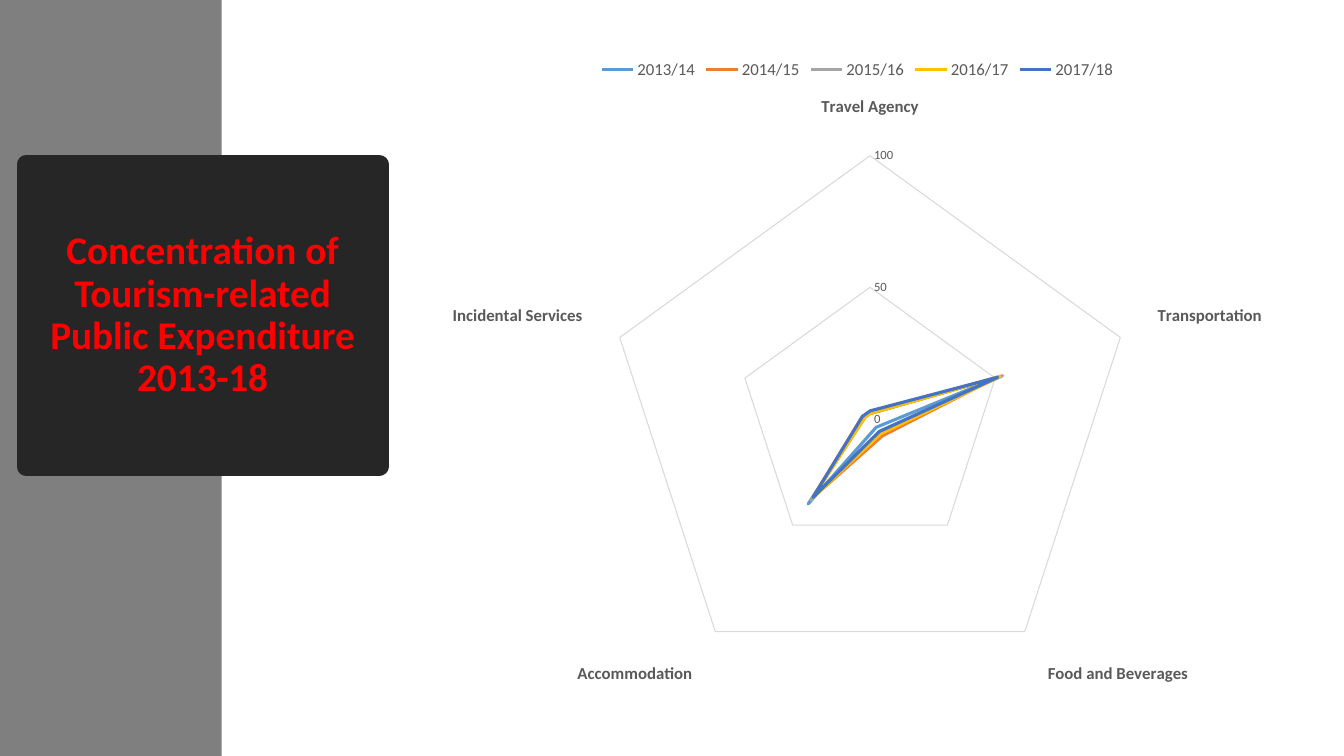
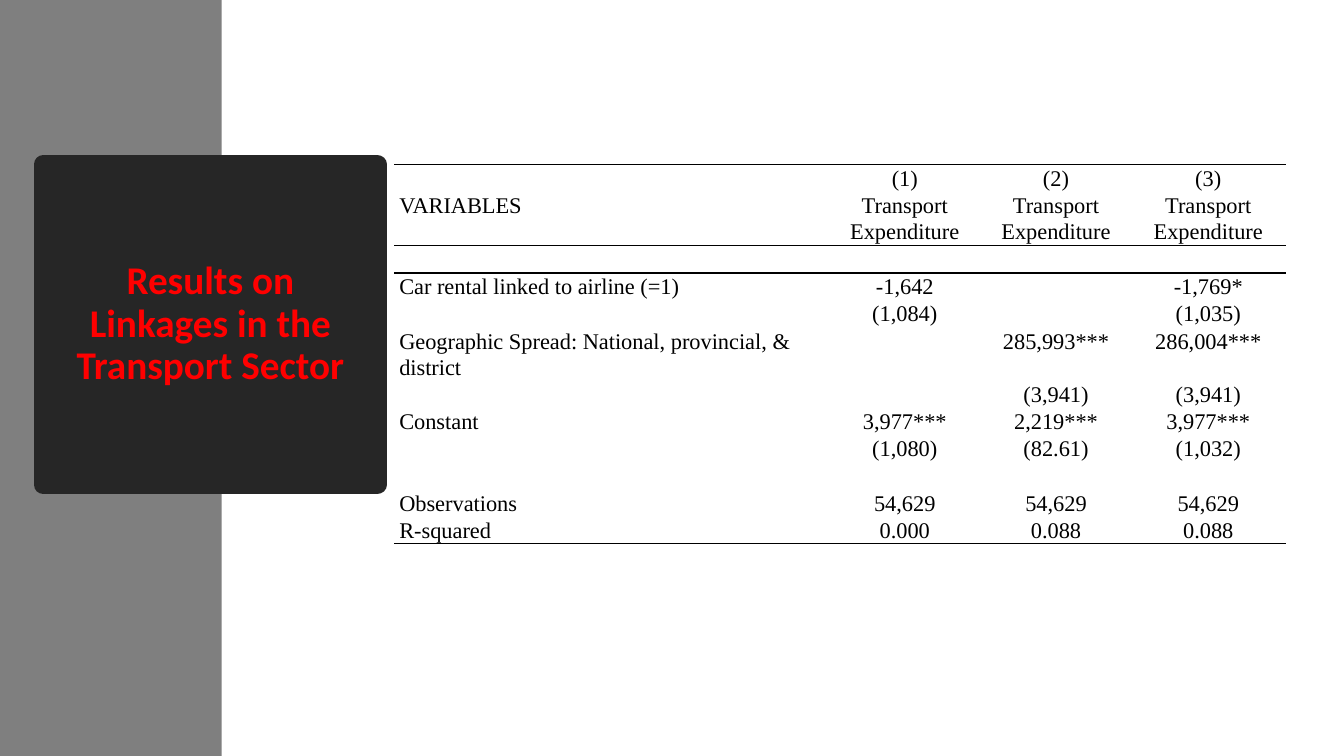
import pptx
import pptx.chart.data
import pptx.dml.color
import pptx.enum.chart
import pptx.enum.shapes
import pptx.enum.text
import pptx.oxml.ns
import pptx.util
from lxml import etree

ALIGN = pptx.enum.text.PP_ALIGN
NO_TABLE_STYLE = "{2D5ABB26-0587-4C30-8999-92F81FD0307C}"


def color(value):
    return pptx.dml.color.RGBColor.from_string(value)


def add_xml(parent, tag, **attributes):
    return etree.SubElement(parent, pptx.oxml.ns.qn(tag), attributes)


class Deck:
    BAND = "7F7F7F"
    CARD = "262626"
    TITLE = "FF0000"
    LABEL = "595959"
    GRID = "D9D9D9"
    INK = "000000"
    SERIES = ["5B9BD5", "ED7D31", "A5A5A5", "FFC000", "4472C4"]
    SANS = "Calibri"
    SERIF = "Times New Roman"

    def __init__(self, presentation):
        self.presentation = presentation
        self.slide = None

    def across(self, percent):
        return round(self.presentation.slide_width * percent / 100)

    def down(self, percent):
        return round(self.presentation.slide_height * percent / 100)

    def box(self, left, top, width, height):
        return self.across(left), self.down(top), self.across(width), self.down(height)

    def style_font(self, font, name, size, ink, bold=False):
        font.name = name
        font.size = pptx.util.Pt(size)
        font.color.rgb = color(ink)
        font.bold = bold

    def rectangle(self, box, fill):
        shape = self.slide.shapes.add_shape(
            pptx.enum.shapes.MSO_SHAPE.RECTANGLE, *self.box(*box))
        shape.shadow.inherit = False
        shape.fill.solid()
        shape.fill.fore_color.rgb = color(fill)
        shape.line.fill.background()
        return shape

    def add_slide(self, title, title_box):
        self.slide = self.presentation.slides.add_slide(self.presentation.slide_layouts[6])
        self.rectangle((0, 0, 16.5, 100), self.BAND)
        self.title_card(title, title_box)

    def title_card(self, text, box):
        card = self.rectangle(box, self.CARD)
        card.line.color.rgb = color(self.CARD)
        card.line.width = pptx.util.Pt(13.75)
        add_xml(card.line._get_or_add_ln(), "a:round")
        frame = card.text_frame
        frame.text = text
        frame.word_wrap = True
        frame.vertical_anchor = pptx.enum.text.MSO_ANCHOR.MIDDLE
        frame.margin_left = frame.margin_right = pptx.util.Inches(0.15)
        paragraph = frame.paragraphs[0]
        paragraph.alignment = ALIGN.CENTER
        paragraph.line_spacing = 0.9
        self.style_font(paragraph.runs[0].font, self.SANS, 28, self.TITLE, True)

    def hairline(self, line):
        line.color.rgb = color(self.GRID)
        line.width = pptx.util.Pt(0.75)

    def radar_chart(self, box, categories, series_values):
        data = pptx.chart.data.CategoryChartData()
        data.categories = categories
        for name, values in series_values.items():
            data.add_series(name, values)
        chart = self.slide.shapes.add_chart(
            pptx.enum.chart.XL_CHART_TYPE.RADAR, *self.box(*box), data).chart
        chart.has_title = False
        self.style_font(chart.font, self.SANS, 10, self.INK)
        chart.has_legend = True
        chart.legend.position = pptx.enum.chart.XL_LEGEND_POSITION.TOP
        chart.legend.include_in_layout = False
        self.style_font(chart.legend.font, self.SANS, 12, self.LABEL)
        for axis, size, bold in ((chart.category_axis, 12, True),
                                 (chart.value_axis, 9, False)):
            axis.major_tick_mark = pptx.enum.chart.XL_TICK_MARK.NONE
            axis.minor_tick_mark = pptx.enum.chart.XL_TICK_MARK.NONE
            self.style_font(axis.tick_labels.font, self.SANS, size, self.LABEL, bold)
        chart.category_axis.has_major_gridlines = False
        self.hairline(chart.category_axis.format.line)
        values_axis = chart.value_axis
        values_axis.minimum_scale, values_axis.maximum_scale = 0, 100
        values_axis.major_unit = 50
        values_axis.format.line.fill.background()
        self.hairline(values_axis.major_gridlines.format.line)
        for series, ink in zip(chart.plots[0].series, self.SERIES):
            series.smooth = False
            series.format.line.color.rgb = color(ink)
            series.format.line.width = pptx.util.Pt(2.25)

    def table(self, left, top, columns, heights, rows, ruled_above, ruled_below):
        box = self.box(left, top, sum(columns), sum(heights))
        table = self.slide.shapes.add_table(len(rows), len(columns), *box).table
        table.first_row = table.horz_banding = False
        table._tbl.tblPr[0].text = NO_TABLE_STYLE
        for column, width in zip(table.columns, columns):
            column.width = self.across(width)
        for row_index, texts in enumerate(rows):
            table.rows[row_index].height = self.down(heights[row_index])
            for column_index, text in enumerate(texts):
                cell = table.cell(row_index, column_index)
                self.fill_cell(cell, text, ALIGN.CENTER if column_index else ALIGN.LEFT)
                if row_index in ruled_below:
                    self.rule(cell, "a:lnB")
                if row_index in ruled_above:
                    self.rule(cell, "a:lnT")

    def fill_cell(self, cell, text, alignment):
        cell.fill.background()
        cell.margin_left = cell.margin_right = pptx.util.Inches(0.05)
        cell.margin_top = cell.margin_bottom = 0
        cell.text_frame.text = text
        paragraph = cell.text_frame.paragraphs[0]
        paragraph.alignment = alignment
        paragraph.line_spacing = 1.07
        for run in paragraph.runs:
            self.style_font(run.font, self.SERIF, 16, self.INK)
        if not text:
            end = add_xml(paragraph._p, "a:endParaRPr", sz="1600")
            add_xml(end, "a:latin", typeface=self.SERIF)

    def rule(self, cell, tag):
        properties = cell._tc.get_or_add_tcPr()
        line = add_xml(properties, tag, w=str(pptx.util.Pt(1)))
        add_xml(add_xml(line, "a:solidFill"), "a:srgbClr", val=self.INK)
        properties.insert(0, line)


def main():
    presentation = pptx.Presentation()
    presentation.slide_width = pptx.util.Inches(13.33)
    presentation.slide_height = pptx.util.Inches(7.5)
    deck = Deck(presentation)

    deck.add_slide("Concentration of Tourism-related Public Expenditure 2013-18",
                   (1.95, 21.73, 26.25, 40))
    deck.radar_chart(
        (30.9, 6.4, 65.78, 85.73),
        ["Travel Agency", "Transportation", "Food and Beverages",
         "Accommodation", "Incidental Services"],
        {"2013/14": (2, 52, 4, 40, 2),
         "2014/15": (2, 50, 8, 37, 3),
         "2015/16": (2, 53, 6, 38, 2),
         "2016/17": (2, 52, 7, 37, 2),
         "2017/18": (3, 51, 6, 37, 3)})

    deck.add_slide("Results on Linkages in the Transport Sector",
                   (3.23, 21.73, 24.83, 42.4))
    rows = [
        ("", "(1)", "(2)", "(3)"),
        ("VARIABLES",) + ("Transport Expenditure",) * 3,
        ("",) * 4,
        ("Car rental linked to airline (=1)", "-1,642", "", "-1,769*"),
        ("", "(1,084)", "", "(1,035)"),
        ("Geographic Spread: National, provincial, & district",
         "", "285,993***", "286,004***"),
        ("", "", "(3,941)", "(3,941)"),
        ("Constant", "3,977***", "2,219***", "3,977***"),
        ("", "(1,080)", "(82.61)", "(1,032)"),
        ("",) * 4,
        ("Observations",) + ("54,629",) * 3,
        ("R-squared", "0.000", "0.088", "0.088"),
    ]
    heights = [7.2 if row[0] == "VARIABLES" else 3.6 for row in rows]
    deck.table(29.33, 21.73, (32.25, 11.48, 11.03, 11.63), heights, rows,
               ruled_above=(0, 2), ruled_below=(1, len(rows) - 1))

    presentation.save("out.pptx")


if __name__ == "__main__":
    main()
